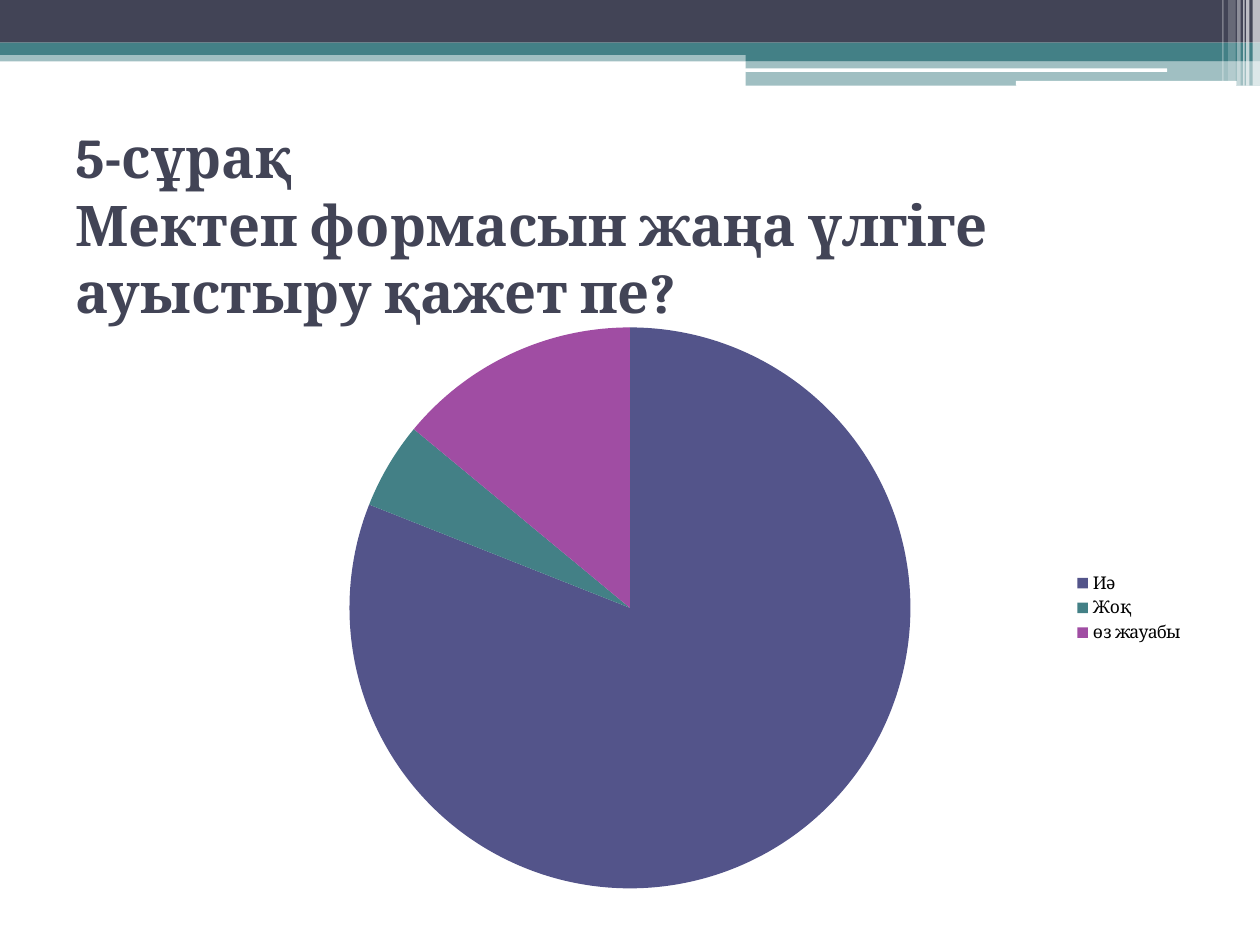
from lxml.etree import SubElement
from pptx import Presentation
from pptx.chart.data import CategoryChartData
from pptx.dml.color import RGBColor
from pptx.enum.chart import XL_CHART_TYPE, XL_LEGEND_POSITION
from pptx.enum.shapes import MSO_SHAPE
from pptx.enum.text import MSO_ANCHOR
from pptx.oxml.ns import qn
from pptx.util import Cm, Pt

COLORS = {
    "dark": "424456",
    "teal": "438086",
    "indigo": "53548A",
    "purple": "A04DA3",
    "white": "FFFFFF",
    "black": "000000",
}
FONT = "Cambria"


def rgb(name):
    return RGBColor.from_string(COLORS[name])


def format_font(font, size, color, bold=False):
    font.name, font.size, font.bold = FONT, Pt(size), bold
    font.color.rgb = rgb(color)


def add_text(p, text, **style):
    """Add text to a paragraph; each newline becomes a line break."""
    for i, line in enumerate(text.split("\n")):
        if i:
            p.add_line_break()
        r = p.add_run()
        r.text = line
        format_font(r.font, **style)


class SlideBuilder:
    def __init__(self, s):
        self.s = s

    def bar(self, x, y, w, h, color, opacity=100, rounded=False):
        kind = MSO_SHAPE.ROUNDED_RECTANGLE if rounded else MSO_SHAPE.RECTANGLE
        sp = self.s.shapes.add_shape(kind, Cm(x), Cm(y), Cm(w), Cm(h))
        sp.shadow.inherit = False
        sp.line.fill.background()
        sp.fill.solid()
        sp.fill.fore_color.rgb = rgb(color)
        if opacity < 100:
            clr = sp.fill._xPr.find(".//" + qn("a:srgbClr"))
            SubElement(clr, qn("a:alpha"), val=str(opacity * 1000))

    def title(self, x, y, w, h, text):
        tf = self.s.shapes.add_textbox(Cm(x), Cm(y), Cm(w), Cm(h)).text_frame
        tf.word_wrap = True
        tf.vertical_anchor = MSO_ANCHOR.MIDDLE
        add_text(tf.paragraphs[0], text, size=32, color="dark", bold=True)

    def pie(self, x, y, w, h, slices):
        data = CategoryChartData()
        data.categories = [name for name, _, _ in slices]
        data.add_series("Series 1", [value for _, value, _ in slices])
        chart = self.s.shapes.add_chart(
            XL_CHART_TYPE.PIE, Cm(x), Cm(y), Cm(w), Cm(h), data).chart
        chart.has_title = False
        format_font(chart.font, size=10, color="black")
        chart.has_legend = True
        chart.legend.position = XL_LEGEND_POSITION.RIGHT
        chart.legend.include_in_layout = True
        plot = chart.plots[0]
        plot.vary_by_categories = True
        for i, (_, _, color) in enumerate(slices):
            fill = plot.series[0].points[i].format.fill
            fill.solid()
            fill.fore_color.rgb = rgb(color)


def main():
    prs = Presentation()
    prs.slide_width, prs.slide_height = Cm(25.4), Cm(19.05)
    b = SlideBuilder(prs.slides.add_slide(prs.slide_layouts[6]))

    # Header bands
    b.bar(0, 1.02, 25.4, 0.22, "teal", opacity=50)
    b.bar(0, 0, 25.4, 0.86, "dark")
    b.bar(0, 0.86, 25.4, 0.25, "teal")
    b.bar(15.03, 1, 10.37, 0.23, "teal")
    b.bar(15.03, 1.23, 10.37, 0.5, "teal", opacity=50)
    b.bar(15.02, 1.38, 8.51, 0.07, "white", rounded=True)
    b.bar(20.48, 1.63, 4.45, 0.1, "white", rounded=True)

    # Vertical stripes in the corner: left, width, height, opacity
    for x, w, h, opacity in [
        (25.25, 0.15, 1.73, 65),
        (25.12, 0.07, 1.73, 65),
        (25.06, 0.03, 1.73, 60),
        (24.94, 0.07, 1.73, 40),
        (24.76, 0.15, 1.63, 20),
        (24.64, 0.03, 1.63, 30),
    ]:
        b.bar(x, 0, w, h, "white", opacity=opacity)

    # Question and answers
    b.title(1.27, 2.51, 22.86, 4,
            "5-сұрақ\nМектеп формасын жаңа үлгіге ауыстыру қажет пе?")
    b.pie(1.27, 6.25, 22.86, 12.01, [
        ("Иә", 81, "indigo"),
        ("Жоқ", 5, "teal"),
        ("өз жауабы", 14, "purple"),
    ])

    prs.save("out.pptx")


if __name__ == "__main__":
    main()
